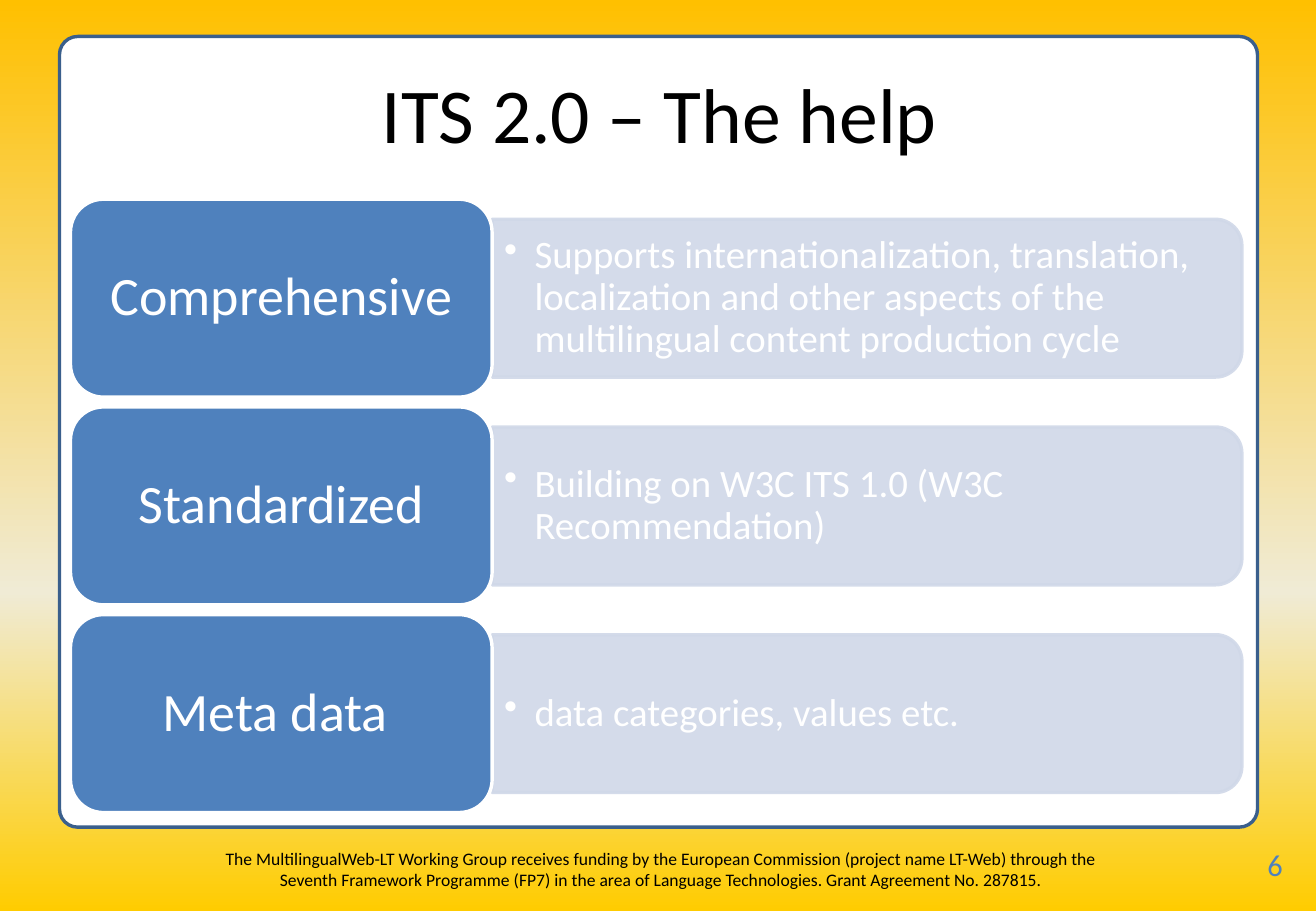
from copy import deepcopy
from dataclasses import dataclass

from lxml.etree import SubElement
from pptx import Presentation
from pptx.dml.color import RGBColor
from pptx.enum.shapes import MSO_SHAPE as Shape
from pptx.enum.text import MSO_ANCHOR as Anchor, PP_ALIGN as Align
from pptx.oxml.ns import qn
from pptx.util import Inches, Pt


@dataclass(frozen=True)
class Theme:
    font: str = "Calibri"
    black: str = "000000"
    white: str = "FFFFFF"
    accent: str = "4F81BD"
    frame: str = "3A5F8C"
    panel: str = "D0D8E8"
    backdrop: tuple = ((0, "FFC000"), (0.65, "F0EBD5"), (1, "FFCC00"))
    title_size: float = 46
    card_size: float = 32
    detail_size: float = 23
    number_size: float = 18
    footer_size: float = 10.4
    line_width: float = 2


class SlideBuilder:
    """Draws on one slide; boxes are (left, top, width, height) in percent of it."""

    def __init__(self, presentation, theme):
        self.theme = theme
        self.column = presentation.slide_width / 100
        self.row = presentation.slide_height / 100
        self.slide = presentation.slides.add_slide(presentation.slide_layouts[6])

    def place(self, box):
        left, top, width, height = box
        return [round(value) for value in (left * self.column, top * self.row,
                                           width * self.column, height * self.row)]

    def backdrop(self):
        fill = self.slide.background.fill
        fill.gradient()
        fill.gradient_angle = 270
        last = fill.gradient_stops[1]._gs
        last.addnext(deepcopy(last))
        for stop, (position, color) in zip(fill.gradient_stops, self.theme.backdrop):
            stop.position = position
            stop.color.rgb = RGBColor.from_string(color)

    def shape(self, kind, box, fill, line, adjustment=None):
        shape = self.slide.shapes.add_shape(kind, *self.place(box))
        shape.shadow.inherit = False
        shape.fill.solid()
        shape.fill.fore_color.rgb = RGBColor.from_string(fill)
        shape.line.color.rgb = RGBColor.from_string(line)
        shape.line.width = Pt(self.theme.line_width)
        if adjustment is not None:
            shape.adjustments[0] = adjustment
        return shape

    def panel(self, box):
        """Draw a translucent panel whose right-hand corners are round."""
        color = self.theme.panel
        shape = self.shape(Shape.ROUND_2_SAME_RECTANGLE, box, color, color)
        left, top, width, height = self.place(box)
        shape.left = left + (width - height) // 2
        shape.top = top + (height - width) // 2
        shape.width, shape.height = height, width
        shape.rotation = 90
        for node in shape._element.spPr.iter(qn("a:srgbClr")):
            SubElement(node, qn("a:alpha"), val="90000")

    def set_text(self, shape, text, size, color, align=Align.LEFT, anchor=Anchor.TOP,
                 insets=(0.1, 0.05), bullet=False, line_spacing=None):
        frame = shape.text_frame
        frame.word_wrap = True
        frame.vertical_anchor = anchor
        frame.margin_left = frame.margin_right = Inches(insets[0])
        frame.margin_top = frame.margin_bottom = Inches(insets[1])
        frame.text = text
        paragraph = frame.paragraphs[0]
        if bullet:
            properties = paragraph._p.get_or_add_pPr()
            properties.set("marL", str(Inches(0.25)))
            properties.set("indent", str(-Inches(0.25)))
            SubElement(properties, qn("a:buChar"), char="•")
        paragraph.alignment = align
        if line_spacing:
            paragraph.line_spacing = line_spacing
        font = paragraph.runs[0].font
        font.name = self.theme.font
        font.size = Pt(size)
        font.color.rgb = RGBColor.from_string(color)

    def text(self, box, text, size, color, **style):
        self.set_text(self.slide.shapes.add_textbox(*self.place(box)),
                      text, size, color, **style)

    def benefit(self, top, heading, detail):
        """Draw one row: a heading card and the panel that explains it."""
        theme = self.theme
        card_height, panel_height, text_height = 21.73, 17.33, 15.6
        middle = top + card_height / 2
        self.panel((37.4, middle - panel_height / 2, 56.97, panel_height))
        self.text((37.4, middle - text_height / 2, 56.33, text_height), detail,
                  theme.detail_size, theme.white, anchor=Anchor.MIDDLE,
                  bullet=True, line_spacing=0.9)
        card = self.shape(Shape.ROUNDED_RECTANGLE, (5.36, top, 32.04, card_height),
                          theme.accent, theme.white)
        self.set_text(card, heading, theme.card_size, theme.white, align=Align.CENTER,
                      anchor=Anchor.MIDDLE, insets=(0.13, 0.07), line_spacing=0.9)


BENEFITS = (
    ("Comprehensive", "Supports internationalization, translation, localization and "
                      "other aspects of the multilingual content production cycle"),
    ("Standardized", "Building on W3C ITS 1.0 (W3C Recommendation)"),
    ("Meta data ", "data categories, values etc."),
)
FUNDING = ("The MultilingualWeb-LT Working Group receives funding by the European "
           "Commission (project name LT-Web) through the Seventh Framework Programme "
           "(FP7) in the area of Language Technologies. Grant Agreement No. 287815.")


def main():
    presentation = Presentation()
    presentation.slide_width, presentation.slide_height = Inches(10.83), Inches(7.5)
    theme = Theme()
    builder = SlideBuilder(presentation, theme)
    builder.backdrop()
    builder.shape(Shape.ROUNDED_RECTANGLE, (4.52, 4, 91.04, 86.8),
                  theme.white, theme.frame, adjustment=0.023)
    builder.text((14.96, 92.4, 70.54, 5.33), FUNDING, theme.footer_size, theme.black,
                 align=Align.CENTER)
    builder.text((4.71, 4, 90.77, 16.67), "ITS 2.0 – The help", theme.title_size,
                 theme.black, align=Align.CENTER, anchor=Anchor.MIDDLE)
    builder.text((96.12, 92.8, 3.88, 5.33), "6", theme.number_size, theme.accent,
                 insets=(0.02, 0.01))
    for index, (heading, detail) in enumerate(BENEFITS):
        builder.benefit(21.87 + 22.8 * index, heading, detail)
    presentation.save("out.pptx")


if __name__ == "__main__":
    main()
